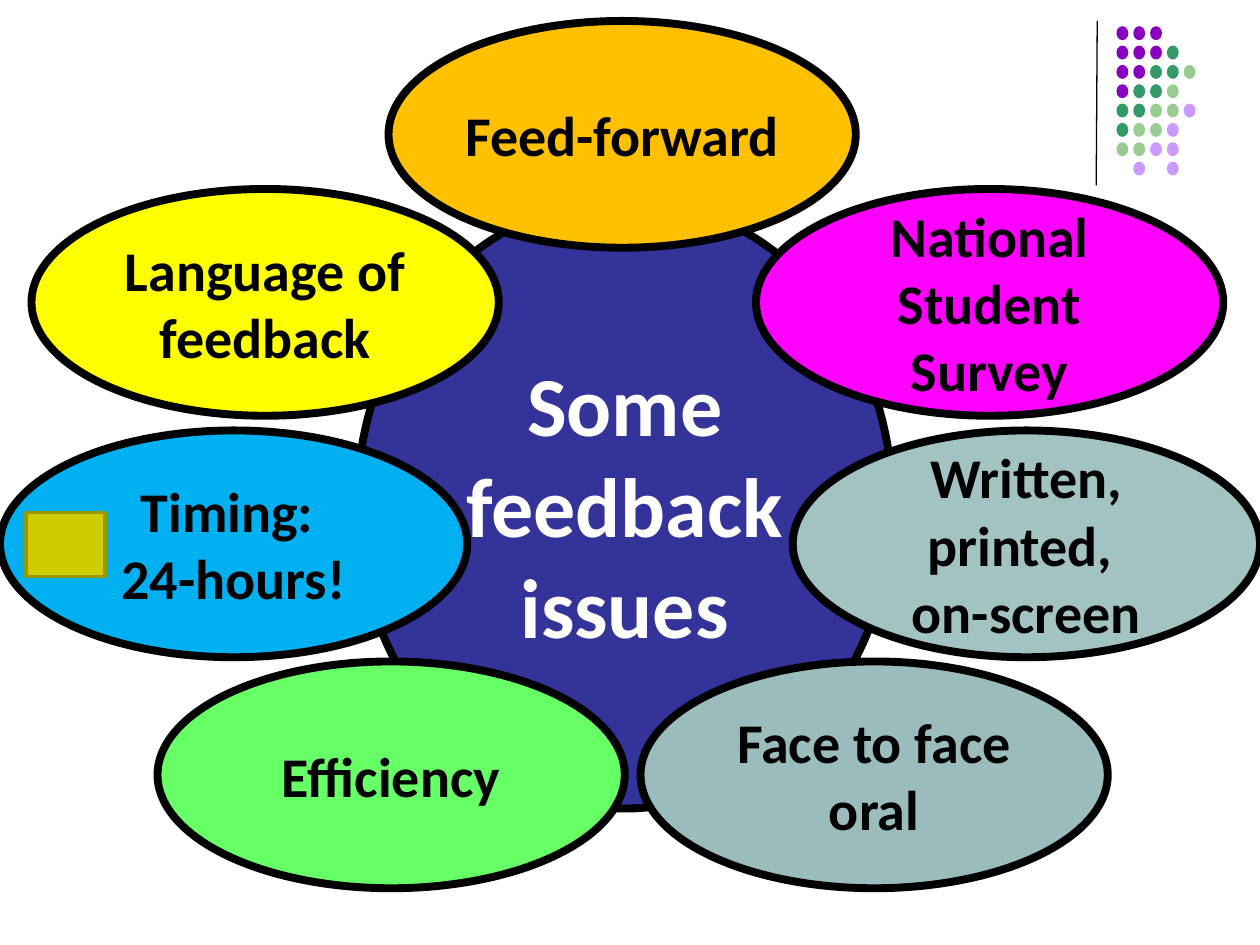
from lxml import etree
from pptx import Presentation
from pptx.dml.color import RGBColor
from pptx.enum.shapes import MSO_CONNECTOR, MSO_SHAPE
from pptx.enum.text import MSO_ANCHOR, PP_ALIGN
from pptx.oxml.ns import qn
from pptx.util import Pt

OVAL = MSO_SHAPE.OVAL
BUTTON = MSO_SHAPE.ACTION_BUTTON_CUSTOM
STRAIGHT = MSO_CONNECTOR.STRAIGHT
MIDDLE = MSO_ANCHOR.MIDDLE
CENTER = PP_ALIGN.CENTER

FONT = "Calibri"
BLACK = RGBColor(0x00, 0x00, 0x00)
WHITE = RGBColor(0xFF, 0xFF, 0xFF)
NAVY = RGBColor(0x33, 0x33, 0x99)
GOLD = RGBColor(0xFF, 0xC0, 0x00)
YELLOW = RGBColor(0xFF, 0xFF, 0x00)
PINK = RGBColor(0xFF, 0x00, 0xFF)
BLUE = RGBColor(0x00, 0xB0, 0xF0)
LIME = RGBColor(0x66, 0xFF, 0x66)
MIST = RGBColor(0xA3, 0xC2, 0xC2)
TEAL = RGBColor(0x9A, 0xBC, 0xBC)
OLIVE = RGBColor(0xCC, 0xCC, 0x00)
MOSS = RGBColor(0x97, 0x97, 0x00)
DOTS = {
    "P": RGBColor(0x8A, 0x00, 0xC0),
    "G": RGBColor(0x33, 0x99, 0x66),
    "L": RGBColor(0x99, 0xCC, 0x91),
    "V": RGBColor(0xCC, 0x99, 0xFF),
}
ROWS = ("PPP", "PPPG", "PPGGL", "PGGL", "GGLLV", "GLLV", "LLVV", "-V-V")

ISSUES = (
    (453, 246, MIST, "Written, printed, \non-screen"),
    (18, 108, YELLOW, "Language of feedback"),
    (432, 108, PINK, "National Student Survey"),
    (0, 246, BLUE, "Timing: \n24-hours!"),
    (222, 12, GOLD, "Feed-forward"),
    (90, 378, LIME, "Efficiency"),
    (366, 378, TEAL, "Face to face\noral"),
)


def add_form(shapes, kind, box, fill, line=None, width=0):
    """Add a flat preset shape, outlined when a line colour is given."""
    form = shapes.add_shape(kind, *(Pt(n) for n in box))
    form.shadow.inherit = False
    form.fill.solid()
    form.fill.fore_color.rgb = fill
    if line is None:
        form.line.fill.background()
    else:
        form.line.color.rgb = line
        form.line.width = Pt(width)
    return form


def add_bubble(shapes, box, fill, text, size, color, inset):
    """Add a thick-lined ellipse with bold centred text."""
    form = add_form(shapes, OVAL, box, fill, BLACK, 4.5)
    frame = form.text_frame
    frame.text = text
    frame.word_wrap = True
    frame.vertical_anchor = MIDDLE
    frame.margin_left = frame.margin_right = Pt(2 * inset)
    frame.margin_top = frame.margin_bottom = Pt(inset)
    for para in frame.paragraphs:
        para.alignment = CENTER
        for run in para.runs:
            run.font.name = FONT
            run.font.size = Pt(size)
            run.font.bold = True
            run.font.color.rgb = color


def add_dots(shapes):
    """Add the grouped grid of coloured dots."""
    group = shapes.add_group_shape()
    for row, codes in enumerate(ROWS):
        for col, code in enumerate(codes):
            if code in DOTS:
                box = (638 + 9.6 * col, 15 + 11.05 * row, 6.8, 8)
                add_form(group.shapes, OVAL, box, DOTS[code])


def add_rule(shapes):
    """Add the thin line beside the dots."""
    rule = shapes.add_connector(STRAIGHT, Pt(627), Pt(12), Pt(626.4), Pt(106))
    rule.line.color.rgb = BLACK
    rule.line.width = Pt(0.75)
    etree.SubElement(rule._element.spPr, qn("a:effectLst"))


def main():
    """Build the feedback issues slide."""
    deck = Presentation()
    deck.slide_width, deck.slide_height = Pt(720), Pt(540)
    shapes = deck.slides.add_slide(deck.slide_layouts[6]).shapes
    add_rule(shapes)
    add_dots(shapes)
    hub = (204, 114, 306, 348)
    add_bubble(shapes, hub, NAVY, "Some feedback\nissues", 48, WHITE, 3.6)
    for left, top, fill, text in ISSUES:
        box = (left, top, 267, 129.6)
        add_bubble(shapes, box, fill, text, 32, BLACK, 0)
    add_form(shapes, BUTTON, (15, 293, 45, 36.5), OLIVE, MOSS, 2)
    deck.save("out.pptx")


if __name__ == "__main__":
    main()
